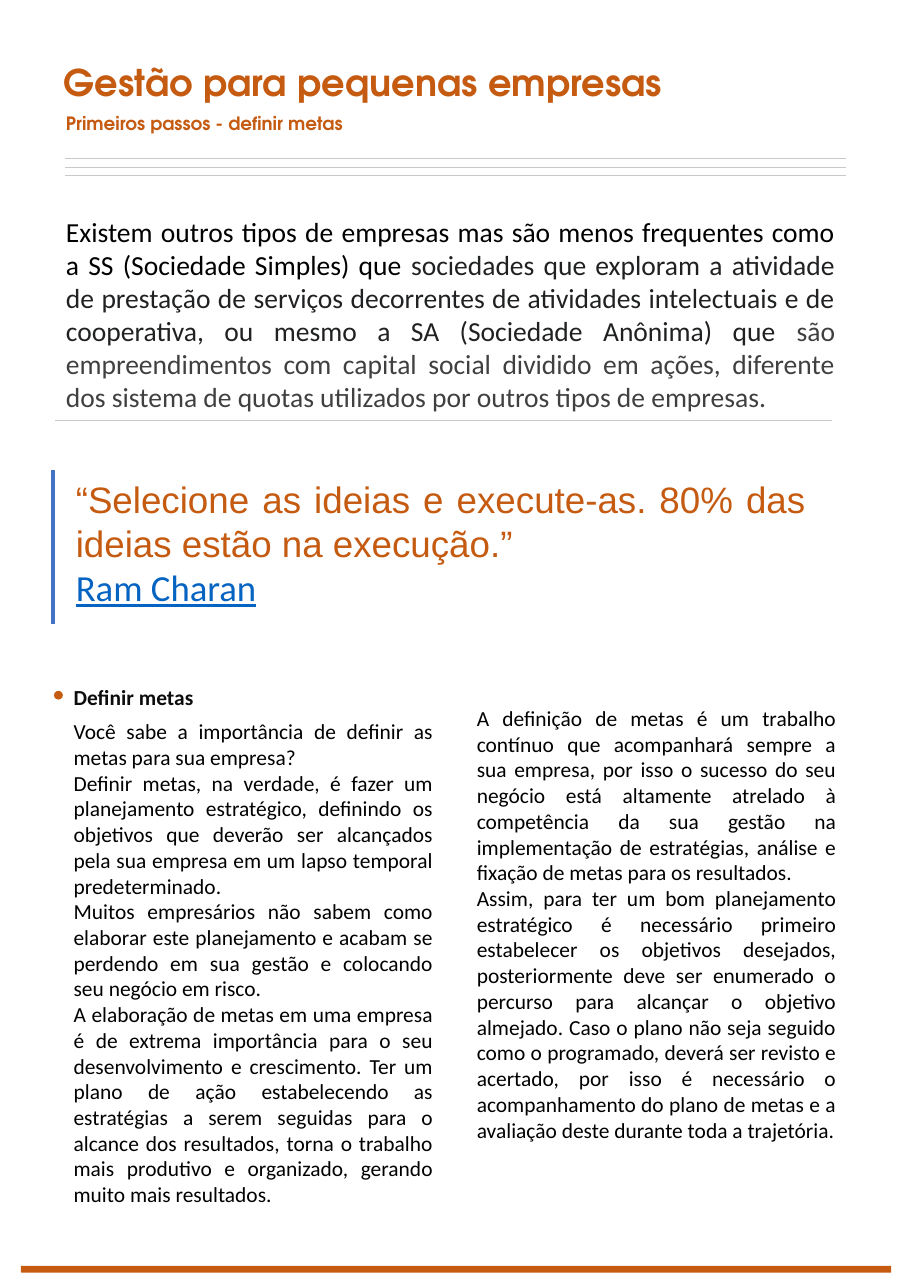
from lxml import etree
from pptx import Presentation
from pptx.dml.color import RGBColor
from pptx.enum.shapes import MSO_CONNECTOR, MSO_SHAPE
from pptx.enum.text import MSO_ANCHOR, MSO_AUTO_SIZE, PP_ALIGN
from pptx.oxml.ns import qn
from pptx.util import Inches, Pt

LINE, OVAL, ROUND = MSO_CONNECTOR.STRAIGHT, MSO_SHAPE.OVAL, MSO_SHAPE.ROUNDED_RECTANGLE
LEFT, JUST = PP_ALIGN.LEFT, PP_ALIGN.JUSTIFY
TOP, MIDDLE = MSO_ANCHOR.TOP, MSO_ANCHOR.MIDDLE
FIXED = MSO_AUTO_SIZE.NONE

ORANGE = RGBColor(0xC5, 0x5A, 0x11)
GRAY = RGBColor(0xC9, 0xC9, 0xC9)
BLUE = RGBColor(0x44, 0x72, 0xC4)
LINK = RGBColor(0x05, 0x63, 0xC1)
BLACK = RGBColor(0, 0, 0)
INK = RGBColor(0x0D, 0x0D, 0x0D)
DARK = RGBColor(0x20, 0x21, 0x22)
SOFT = RGBColor(0x40, 0x40, 0x40)
BODY, QUOTE, DISPLAY = "Calibri", "Arial", "TeX Gyre Adventor"

# The page is a grid of 100 columns by 100 rows.
WIDTH, HEIGHT = Inches(8.27), Inches(11.69)
COL, ROW = WIDTH / 100, HEIGHT / 100

INTRO = [
    ("Existem outros tipos de empresas mas são menos frequentes como a SS "
     "(Sociedade Simples) que ", {"color": BLACK}),
    ("sociedades que exploram a atividade de prestação de serviços decorrentes de "
     "atividades intelectuais e de cooperativa, ou mesmo a SA (Sociedade Anônima) que ",
     {"color": DARK}),
    ("são empreendimentos com capital social dividido em ações, diferente dos sistema "
     "de quotas utilizados por outros tipos de empresas.", {"color": SOFT}),
]
SAYING = "“Selecione as ideias e execute-as. 80% das ideias estão na execução.”"
GOALS = [
    "Você sabe a importância de definir as metas para sua empresa?",
    "Definir metas, na verdade, é fazer um planejamento estratégico, definindo os "
    "objetivos que deverão ser alcançados pela sua empresa em um lapso temporal "
    "predeterminado.",
    "Muitos empresários não sabem como elaborar este planejamento e acabam se perdendo "
    "em sua gestão e colocando seu negócio em risco.",
    "A elaboração de metas em uma empresa é de extrema importância para o seu "
    "desenvolvimento e crescimento. Ter um plano de ação estabelecendo as estratégias a "
    "serem seguidas para o alcance dos resultados, torna o trabalho mais produtivo e "
    "organizado, gerando muito mais resultados.",
]
PLAN = [
    "A definição de metas é um trabalho contínuo que acompanhará sempre a sua empresa, "
    "por isso o sucesso do seu negócio está altamente atrelado à competência da sua "
    "gestão na implementação de estratégias, análise e fixação de metas para os "
    "resultados.",
    "Assim, para ter um bom planejamento estratégico é necessário primeiro estabelecer "
    "os objetivos desejados, posteriormente deve ser enumerado o percurso para alcançar "
    "o objetivo almejado. Caso o plano não seja seguido como o programado, deverá ser "
    "revisto e acertado, por isso é necessário o acompanhamento do plano de metas e a "
    "avaliação deste durante toda a trajetória.",
]


def place(x, y, w, h):
    """Turn grid units into slide lengths."""
    return round(x * COL), round(y * ROW), round(w * COL), round(h * ROW)


def style(run, font=BODY, size=14, color=BLACK, bold=False, under=False):
    face = run.font
    face.name, face.size, face.bold, face.underline = font, Pt(size), bold, under
    face.color.rgb = color


def write(slide, box, paras, align=JUST, anchor=TOP, wrap=True, lead=None,
          shape=None, **form):
    """Fill a text box; a paragraph is a string or a list of (text, format) runs."""
    if shape is None:
        shape = slide.shapes.add_textbox(*place(*box))
    else:
        shape.left, shape.top, shape.width, shape.height = place(*box)
    frame = shape.text_frame
    frame.auto_size, frame.word_wrap, frame.vertical_anchor = FIXED, wrap, anchor
    for i, runs in enumerate(paras):
        para = frame.add_paragraph() if i else frame.paragraphs[0]
        para.alignment = align
        if lead:
            para.line_spacing = Pt(lead)
        for text, extra in [(runs, {})] if isinstance(runs, str) else runs:
            run = para.add_run()
            run.text = text
            style(run, **{**form, **extra})


def rule(slide, x, y, w=0, h=0, color=GRAY, weight=0.5):
    left, top, wide, high = place(x, y, w, h)
    line = slide.shapes.add_connector(LINE, left, top, left + wide, top + high)
    line.line.color.rgb, line.line.width = color, Pt(weight)
    etree.SubElement(line._element.spPr, qn("a:effectLst"))


def solid(slide, kind, box):
    shape = slide.shapes.add_shape(kind, *place(*box))
    shape.shadow.inherit = False
    shape.fill.solid()
    shape.fill.fore_color.rgb = ORANGE
    shape.line.fill.background()
    return shape


def header(slide, x, y, w, h):
    write(slide, (x, y, 68.8, 4.28), ["Gestão para pequenas empresas"],
          shape=slide.shapes.title, align=LEFT, anchor=MIDDLE, wrap=False,
          font=DISPLAY, size=24, color=ORANGE, bold=True)
    write(slide, (x + 0.25, y + 4.11, 49.94, 2.57), ["Primeiros passos - definir metas"],
          align=LEFT, font=DISPLAY, size=12, color=ORANGE, bold=True)
    for i in range(3):
        rule(slide, x + 1.33, y + h - 0.64 * i, w - 1.33)


def intro(slide, x, y, w, h):
    write(slide, (x, y, w, h), [INTRO], size=18)
    rule(slide, x, y + h, w - 1.56)


def quote(slide, x, y, w, h):
    rule(slide, x, y, h=h, color=BLUE, weight=2.25)
    name = [("Ram Charan", {"font": BODY, "color": LINK, "under": True})]
    write(slide, (x + 1.33, y + 0.08, w - 1.33, h - 0.69), [SAYING, name],
          font=QUOTE, size=24, color=ORANGE)


def article(slide, x, y, w, h):
    wide, inset = 41.84, 0.96
    solid(slide, OVAL, (x, y + 1.2, 0.97, 0.68))
    write(slide, (x + inset, y, w - inset, 3), ["Definir metas"],
          align=LEFT, lead=18.8, color=INK, bold=True)
    write(slide, (x + inset, y + 2.91, wide, h - 2.91), GOALS)
    write(slide, (x + w - wide, y + 1.88, wide, h - 6.93), PLAN)


def footer(slide, *box):
    solid(slide, ROUND, box).adjustments[0] = 0.07


def main():
    deck = Presentation()
    deck.slide_width, deck.slide_height = WIDTH, HEIGHT
    slide = deck.slides.add_slide(deck.slide_layouts.get_by_name("Title Only"))
    footer(slide, 2.3, 98.29, 95.53, 0.51)
    header(slide, 5.8, 4.19, 87.07, 9.41)
    intro(slide, 6.05, 16.25, 86.8, 16.43)
    quote(slide, 5.8, 36.53, 83.8, 11.89)
    article(slide, 5.93, 52.44, 87.06, 42.09)
    deck.save("out.pptx")


if __name__ == "__main__":
    main()
